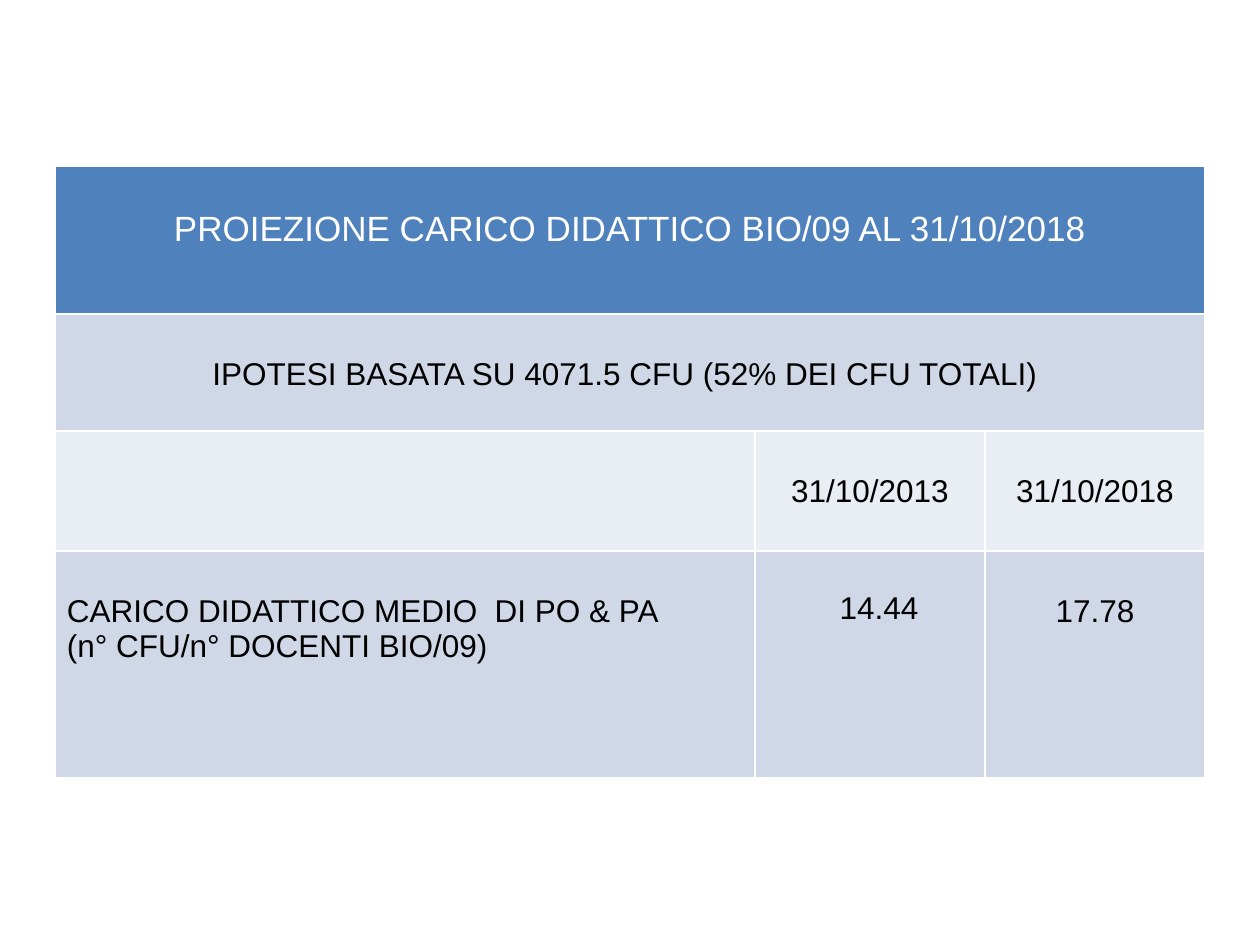
from lxml import etree
from pptx import Presentation
from pptx.dml.color import RGBColor
from pptx.enum.text import MSO_ANCHOR, PP_ALIGN
from pptx.oxml.ns import qn
from pptx.util import Emu, Pt

LEFT, CENTER = PP_ALIGN.LEFT, PP_ALIGN.CENTER
TOP = MSO_ANCHOR.TOP
THEME = {
    "font": "Arial", "header_size": 20, "body_size": 18,
    "header": "4F81BD", "dark_band": "D0D8E8", "light_band": "E9EDF4",
    "white": "FFFFFF", "black": "000000",
}


def px(length):
    return Emu(round(length * 914400 / 126))


def add_borders(cell, color, width):
    properties = cell._tc.get_or_add_tcPr()
    for index, side in enumerate(("lnL", "lnR", "lnT", "lnB")):
        line = etree.Element(qn(f"a:{side}"), w=str(Pt(width)))
        fill = etree.SubElement(line, qn("a:solidFill"))
        etree.SubElement(fill, qn("a:srgbClr"), val=color)
        properties.insert(index, line)


presentation = Presentation()
presentation.slide_width, presentation.slide_height = px(1260), px(945)
slide = presentation.slides.add_slide(presentation.slide_layouts[6])

# Table grid
column_widths = [700, 230, 220]
row_heights = [148, 117, 120, 227]
table = slide.shapes.add_table(
    len(row_heights), len(column_widths), px(55), px(166),
    px(sum(column_widths)), px(sum(row_heights))).table
for column, width in zip(table.columns, column_widths):
    column.width = px(width)
for row, height in zip(table.rows, row_heights):
    row.height = px(height)

# Row bands and cell borders
bands = ["header", "dark_band", "light_band", "dark_band"]
for row, band in zip(table.rows, bands):
    for cell in row.cells:
        cell.fill.solid()
        cell.fill.fore_color.rgb = RGBColor.from_string(THEME[band])
        add_borders(cell, THEME["white"], 1)
for row in range(2):
    table.cell(row, 0).merge(table.cell(row, 2))

# Cell text: row, column, lines, alignment, left, right and top margins in px
entries = [
    (0, 0, ["PROIEZIONE CARICO DIDATTICO BIO/09 AL 31/10/2018"], CENTER, 12, 12, 44),
    (1, 0, ["IPOTESI BASATA SU 4071.5 CFU (52% DEI CFU TOTALI)"], CENTER, 12, 22, 43),
    (2, 1, ["31/10/2013"], CENTER, 12, 12, 43),
    (2, 2, ["31/10/2018"], CENTER, 12, 12, 43),
    (3, 0, ["CARICO DIDATTICO MEDIO  DI PO & PA",
            "(n° CFU/n° DOCENTI BIO/09)"], LEFT, 12, 12, 43),
    (3, 1, ["14.44"], CENTER, 30, 12, 40),
    (3, 2, ["17.78"], CENTER, 12, 12, 43),
]
for row, column, lines, alignment, left, right, top in entries:
    cell = table.cell(row, column)
    cell.vertical_anchor = TOP
    cell.margin_left, cell.margin_right = px(left), px(right)
    cell.margin_top, cell.margin_bottom = px(top), px(6)
    for index, text in enumerate(lines):
        frame = cell.text_frame
        paragraph = frame.add_paragraph() if index else frame.paragraphs[0]
        paragraph.alignment = alignment
        run = paragraph.add_run()
        run.text = text
        run.font.name = THEME["font"]
        run.font.bold = False
        run.font.size = Pt(THEME["body_size" if row else "header_size"])
        run.font.color.rgb = RGBColor.from_string(THEME["black" if row else "white"])

presentation.save("out.pptx")
